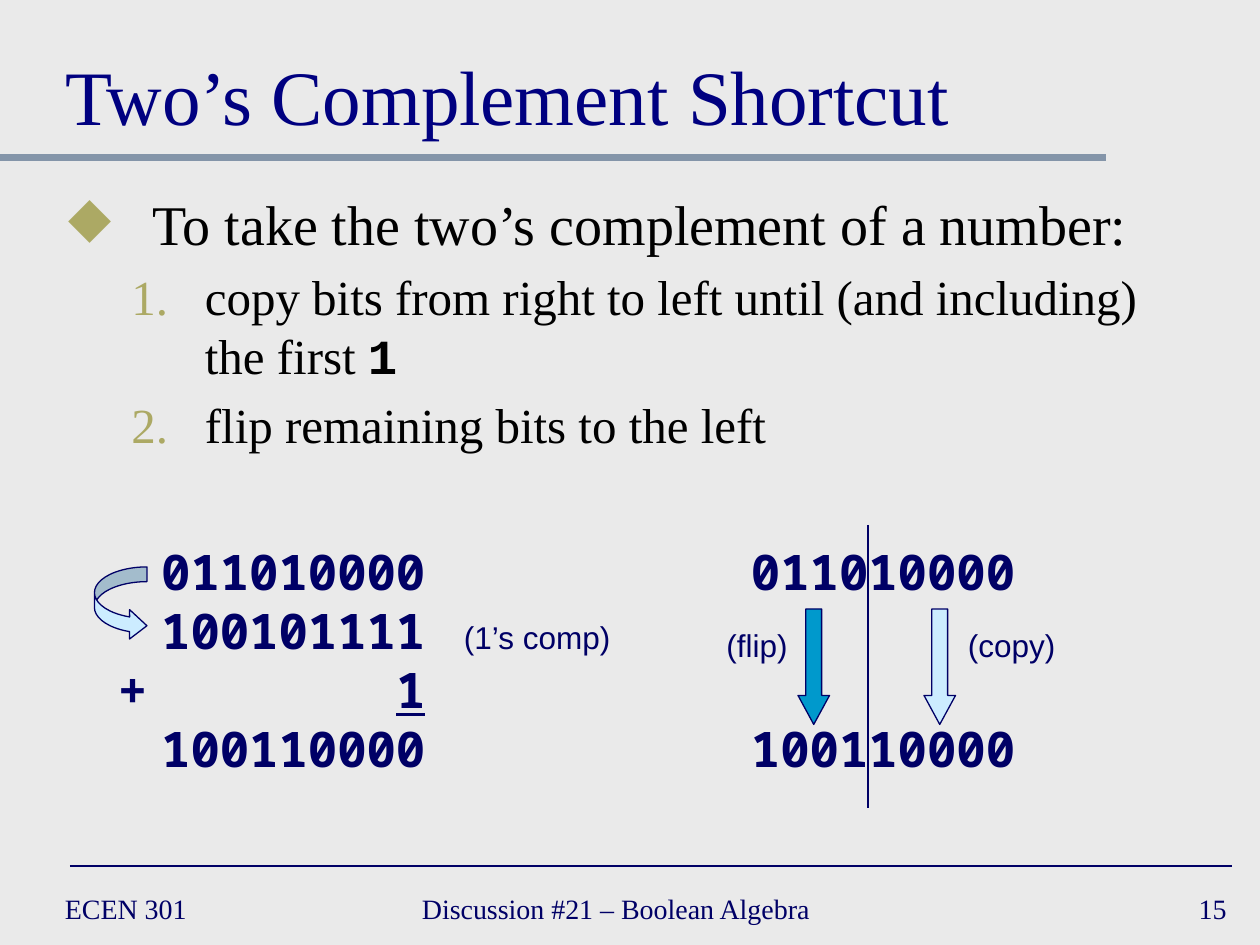
from lxml import etree
from pptx import Presentation
from pptx import util as u
from pptx.dml.color import RGBColor
from pptx.enum import shapes, text
from pptx.oxml import ns

PAPER = RGBColor(0xEA, 0xEA, 0xEA)
NAVY = RGBColor(0x00, 0x00, 0x66)
TITLE_BLUE = RGBColor(0x00, 0x00, 0x80)
BLACK = RGBColor(0x00, 0x00, 0x00)
OLIVE = RGBColor(0xAC, 0xA9, 0x64)
SLATE = RGBColor(0x84, 0x95, 0xA9)
PALE_BLUE = RGBColor(0xCC, 0xEC, 0xFF)
DEEP_BLUE = RGBColor(0x00, 0x99, 0xCC)

SERIF = {"name": "Times New Roman", "size": u.Pt(16)}
SANS = {"name": "Arial", "size": u.Pt(18), "bold": False}
BITS = {"name": "Noto Sans Mono", "size": u.Pt(28), "bold": True}
LEFT, CENTER, RIGHT = text.PP_ALIGN.LEFT, text.PP_ALIGN.CENTER, text.PP_ALIGN.RIGHT
TAB_STOPS = [(17, "r"), (176, "r"), (198, "l"), (293, "r"), (513, "r"), (531, "l")]


def points(*values):
    """Turn numbers into point lengths."""
    return [u.Pt(value) for value in values]


def add_child(parent, tag, **attributes):
    """Append a DrawingML element to its parent."""
    child = etree.SubElement(parent, ns.qn(tag))
    for name, value in attributes.items():
        child.set(name, str(value))
    return child


def add_span(para, words, color=NAVY, **style):
    """Add a formatted run to a paragraph."""
    span = para.add_run()
    span.text = words
    span.font.color.rgb = color
    for name, value in style.items():
        setattr(span.font, name, value)


def add_box(page, place, wrap=False, anchor=text.MSO_ANCHOR.TOP):
    """Add an empty text box and return its frame."""
    frame = page.shapes.add_textbox(*points(*place)).text_frame
    frame.word_wrap = wrap
    frame.vertical_anchor = anchor
    return frame


def add_label(page, place, words, style, align=LEFT, anchor=text.MSO_ANCHOR.TOP):
    """Add a one-line text box."""
    para = add_box(page, place, anchor=anchor).paragraphs[0]
    para.alignment = align
    add_span(para, words, **style)


def next_para(frame, index):
    """Return the first paragraph or a new one."""
    return frame.add_paragraph() if index else frame.paragraphs[0]


def add_rule(page, ends, width, color=NAVY):
    """Draw a straight line without a shadow."""
    rule = page.shapes.add_connector(shapes.MSO_CONNECTOR.STRAIGHT, *points(*ends))
    rule.line.color.rgb = color
    rule.line.width = u.Pt(width)
    add_child(rule._element.spPr, "a:effectLst")


def add_arrow(page, kind, place, fill, adjustments):
    """Draw a filled block arrow."""
    arrow = page.shapes.add_shape(kind, *points(*place))
    arrow.shadow.inherit = False
    arrow.fill.solid()
    arrow.fill.fore_color.rgb = fill
    arrow.line.color.rgb = NAVY
    arrow.line.width = u.Pt(0.75)
    for index, value in enumerate(adjustments):
        arrow.adjustments[index] = value


def set_title(page, words):
    """Place and format the title placeholder."""
    title = page.shapes.title
    title.left, title.top, title.width, title.height = points(30, 12, 660, 72)
    title.text_frame.vertical_anchor = text.MSO_ANCHOR.BOTTOM
    para = title.text_frame.paragraphs[0]
    para.alignment = LEFT
    add_span(para, words, TITLE_BLUE, name="Times New Roman", size=u.Pt(44))


def add_steps(page):
    """Write the bulleted lead and its numbered steps."""
    frame = add_box(page, (32, 105, 658, 111), wrap=True)
    mono = {"name": "Courier New", "bold": True}
    bullet, number = ("a:buChar", {"char": "◆"}), ("a:buAutoNum", {"type": "arabicPeriod"})
    items = [
        (0, 32, 48, 48, bullet, [("To take the two’s complement of a number:", {})]),
        (1, 28, 78, 42, number, [
            ("copy bits from right to left until (and including) the first ", {}), ("1", mono)]),
        (1, 28, 78, 42, number, [("flip remaining bits to the left", {})]),
    ]
    for index, (level, size, margin, hang, (tag, mark), spans) in enumerate(items):
        para = next_para(frame, index)
        para.level = level
        props = para._p.get_or_add_pPr()
        props.set("marL", str(u.Pt(margin)))
        props.set("indent", str(-u.Pt(hang)))
        add_child(add_child(props, "a:buClr"), "a:srgbClr", val=OLIVE)
        add_child(props, tag, **mark)
        if index:
            para.space_before = u.Pt(size * 0.2)
        for words, style in spans:
            add_span(para, words, BLACK, **{**SERIF, "size": u.Pt(size), **style})


def add_sums(page):
    """Write the tabbed binary workings."""
    frame = add_box(page, (60, 306, 630, 142), wrap=True)
    rows = [
        [("\t\t011010000\t\t\t011010000", BITS)],
        [("\t\t100101111\t", BITS), ("(1’s comp)", SANS)],
        [("\t+\t", BITS), ("1", {**BITS, "underline": True})],
        [("\t\t100110000\t\t\t100110000", BITS)],
    ]
    for index, spans in enumerate(rows):
        para = next_para(frame, index)
        stops = add_child(para._p.get_or_add_pPr(), "a:tabLst")
        for position, align in TAB_STOPS:
            add_child(stops, "a:tab", pos=u.Pt(position), algn=align)
        for words, style in spans:
            add_span(para, words, **style)


def add_footer(page):
    """Write the course, topic and page number."""
    for left, width, words, align in [
        (30, 156, "ECEN 301", LEFT),
        (234, 276, "Discussion #21 – Boolean Algebra", LEFT),
        (558, 150, "15", RIGHT),
    ]:
        add_label(page, (left, 504, width, 30), words, SERIF, align, text.MSO_ANCHOR.MIDDLE)


def main():
    """Build and save the slide."""
    deck = Presentation()
    deck.slide_width, deck.slide_height = points(720, 540)
    page = deck.slides.add_slide(deck.slide_layouts[5])
    page.background.fill.solid()
    page.background.fill.fore_color.rgb = PAPER

    add_rule(page, (0, 90, 632, 90), 4, SLATE)
    add_rule(page, (40, 495, 704, 495), 1)
    add_footer(page)
    set_title(page, "Two’s Complement Shortcut")
    add_steps(page)
    add_sums(page)

    kinds = shapes.MSO_SHAPE
    add_arrow(page, kinds.CURVED_RIGHT_ARROW, (54, 324, 30, 42), PALE_BLUE, (0.28, 0.56, 0.33))
    for left, fill in [(528, PALE_BLUE), (456, DEEP_BLUE)]:
        add_arrow(page, kinds.DOWN_ARROW, (left, 348, 18, 66), fill, (0.5, 0.92))
    add_label(page, (546, 354, 65, 29), "(copy)", SANS)
    add_label(page, (408, 354, 50, 29), "(flip)", SANS)
    add_rule(page, (496, 300, 496, 462), 0.75)
    deck.save("out.pptx")


if __name__ == "__main__":
    main()
